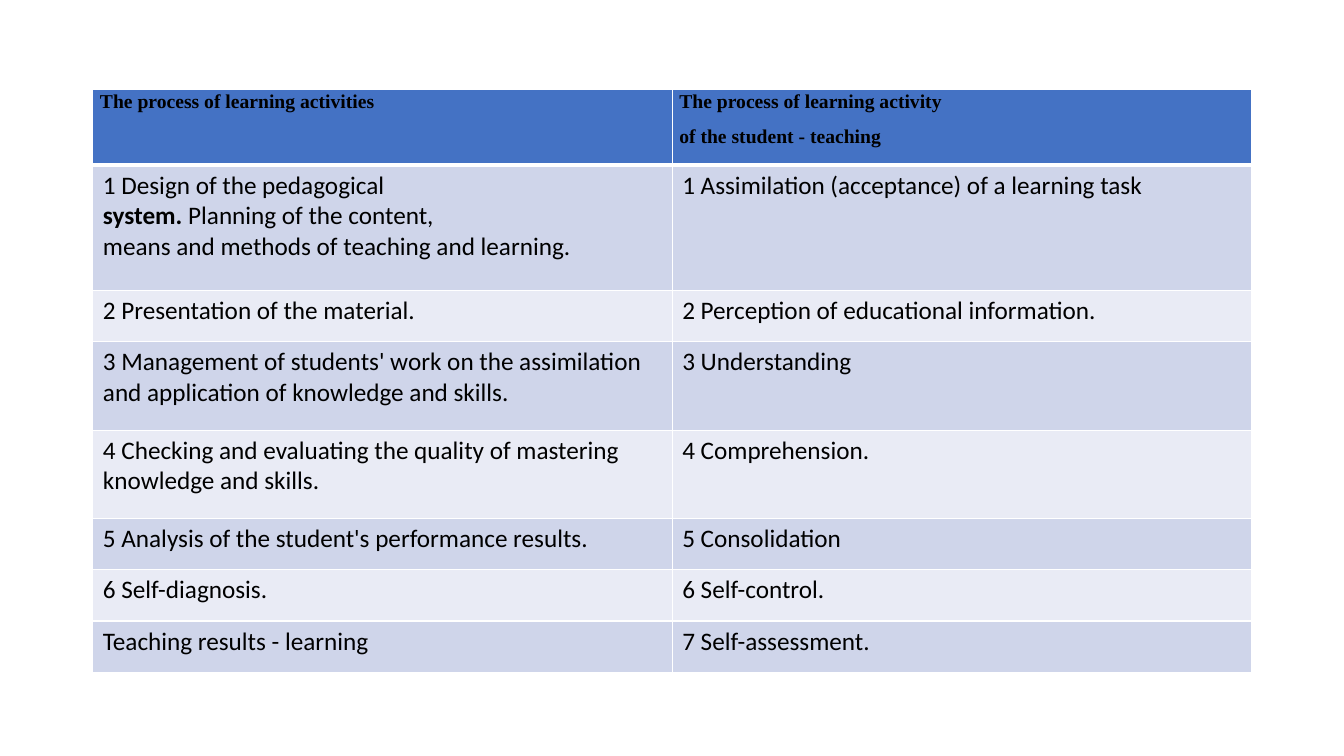
from lxml import etree
from pptx import Presentation
from pptx.dml.color import RGBColor
from pptx.oxml.ns import qn
from pptx.util import Cm, Pt

COLORS = {"header": "4472C4", "odd": "CFD5EA", "even": "E9EBF5",
          "border": "FFFFFF", "text": "000000"}
HEADER_FONT = {"name": "Times New Roman", "size": Pt(14), "bold": True}
BODY_FONT = {"name": "Calibri", "size": Pt(18), "bold": False}
HEADER_SPACING = {"line_spacing": 1.07, "space_after": Pt(8)}
HEADER_MARGINS = {"margin_left": Cm(0.18), "margin_right": Cm(0.18),
                  "margin_top": 0, "margin_bottom": 0}
BOLD_WORD = "system."
COL_WIDTH = 14.6
ROW_HEIGHTS = [1.9, 3.16, 1.29, 2.23, 2.23, 1.29, 1.29, 1.29]
ROWS = [
    (["The process of learning activities"],
     ["The process of learning activity", "of the student - teaching"]),
    (["1 Design of the pedagogical",
      "system. Planning of the content,",
      "means and methods of teaching and learning."],
     ["1 Assimilation (acceptance) of a learning task"]),
    (["2 Presentation of the material."],
     ["2 Perception of educational information."]),
    (["3 Management of students' work on the assimilation and application "
      "of knowledge and skills."],
     ["3 Understanding"]),
    (["4 Checking and evaluating the quality of mastering knowledge and skills."],
     ["4 Comprehension."]),
    (["5 Analysis of the student's performance results."], ["5 Consolidation"]),
    (["6 Self-diagnosis."], ["6 Self-control."]),
    (["Teaching results - learning"], ["7 Self-assessment."]),
]


def set_format(target, values):
    """Set every attribute in values on target."""
    for name, value in values.items():
        setattr(target, name, value)


def add_run(p, text, font):
    """Append a run with the given font values."""
    r = p.add_run()
    r.text = text
    set_format(r.font, font)
    r.font.color.rgb = RGBColor.from_string(COLORS["text"])


def add_line(p, line, font):
    """Write one line, with the leading key word in bold."""
    if line.startswith(BOLD_WORD):
        add_run(p, BOLD_WORD, {**font, "bold": True})
        line = line.removeprefix(BOLD_WORD)
    add_run(p, line, font)


def set_borders(cell, widths):
    """Draw the cell sides with widths in points."""
    tc_pr = cell._tc.get_or_add_tcPr()
    for side, width in widths.items():
        ln = etree.SubElement(tc_pr, qn(f"a:ln{side}"), w=str(Pt(width)))
        fill = etree.SubElement(ln, qn("a:solidFill"))
        etree.SubElement(fill, qn("a:srgbClr"), val=COLORS["border"])


def fill_cell(cell, lines, row):
    """Write and format a cell according to its row."""
    header = row == 0
    set_borders(cell, {"L": 1, "R": 1, "T": 3 if row == 1 else 1,
                       "B": 3 if header else 1})
    color = "header" if header else "odd" if row % 2 else "even"
    cell.fill.solid()
    cell.fill.fore_color.rgb = RGBColor.from_string(COLORS[color])
    if header:
        set_format(cell, HEADER_MARGINS)
    tf = cell.text_frame
    for i, line in enumerate(lines):
        p = tf.add_paragraph() if i else tf.paragraphs[0]
        if header:
            set_format(p, HEADER_SPACING)
        add_line(p, line, HEADER_FONT if header else BODY_FONT)


def add_process_table(s):
    """Add the table that compares teaching with learning."""
    table = s.shapes.add_table(len(ROWS), 2, Cm(2.34), Cm(2.26),
                               Cm(2 * COL_WIDTH), Cm(sum(ROW_HEIGHTS))).table
    for column in table.columns:
        column.width = Cm(COL_WIDTH)
    for i, (height, texts) in enumerate(zip(ROW_HEIGHTS, ROWS)):
        table.rows[i].height = Cm(height)
        for j, lines in enumerate(texts):
            fill_cell(table.cell(i, j), lines, i)


def main():
    """Build the slide and save it."""
    prs = Presentation()
    prs.slide_width, prs.slide_height = Cm(33.87), Cm(19.05)
    s = prs.slides.add_slide(prs.slide_layouts[6])
    add_process_table(s)
    prs.save("out.pptx")


if __name__ == "__main__":
    main()
